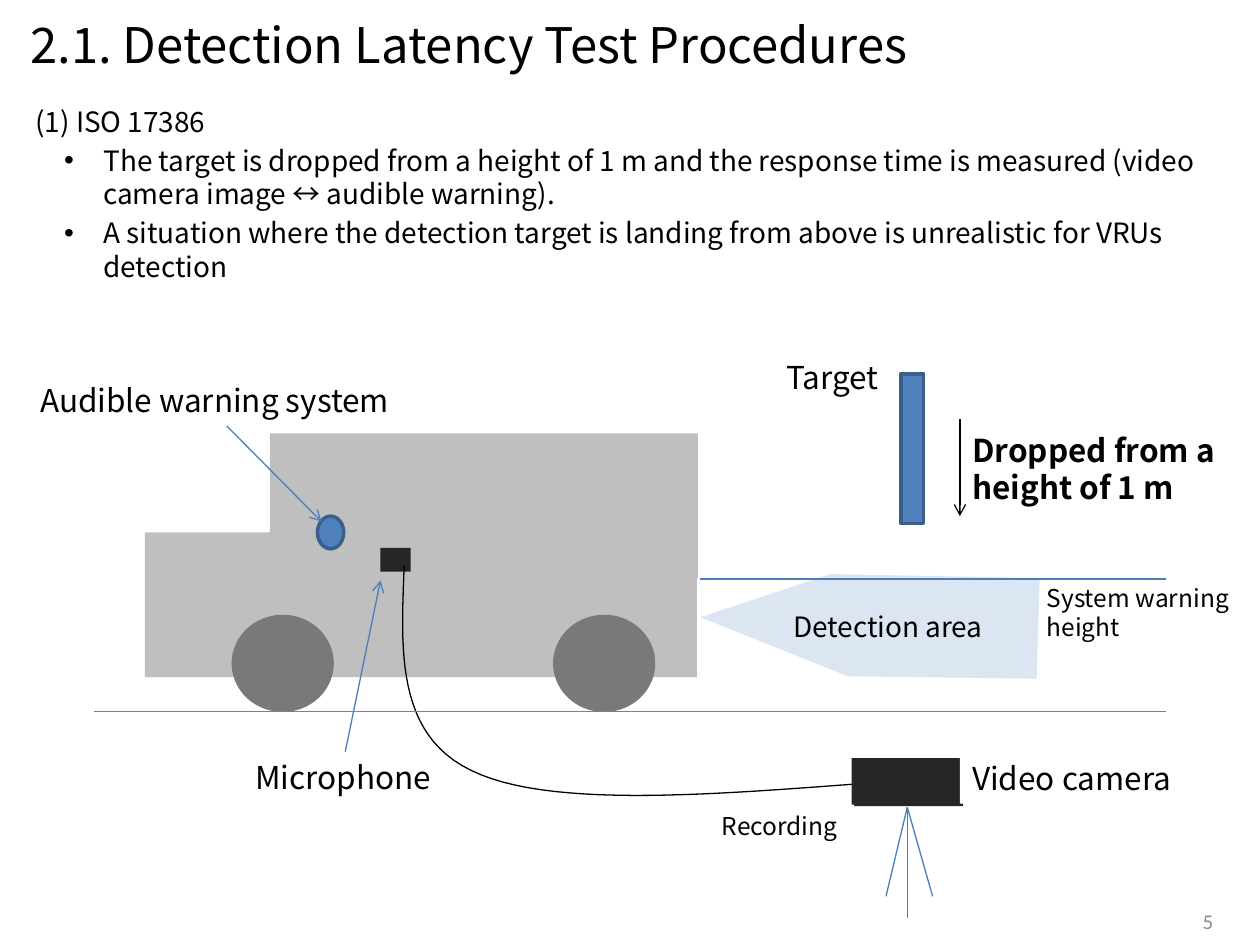
from lxml import etree
from pptx import Presentation
from pptx.dml.color import RGBColor
from pptx.enum.shapes import MSO_CONNECTOR, MSO_SHAPE
from pptx.enum.text import MSO_ANCHOR, PP_ALIGN
from pptx.oxml.ns import qn
from pptx.util import Cm, Pt

FONT = "Noto Sans CJK JP"
BLACK = RGBColor(0x00, 0x00, 0x00)
WHITE = RGBColor(0xFF, 0xFF, 0xFF)
NUMBER_GRAY = RGBColor(0x8C, 0x8C, 0x8C)
CAR_GRAY = RGBColor(0xBF, 0xBF, 0xBF)
WHEEL_GRAY = RGBColor(0x79, 0x79, 0x79)
GROUND_GRAY = RGBColor(0x80, 0x80, 0x80)
DEVICE = RGBColor(0x26, 0x26, 0x26)
BLUE = RGBColor(0x4F, 0x81, 0xBD)
EDGE_BLUE = RGBColor(0x3A, 0x5F, 0x8C)
LINE_BLUE = RGBColor(0x4B, 0x7E, 0xBC)
AREA_BLUE = RGBColor(0xDC, 0xE6, 0xF2)


def add_run(p, text, size, color=BLACK, bold=False, font=FONT):
    r = p.add_run()
    r.text = text
    r.font.name, r.font.size, r.font.bold = font, Pt(size), bold
    r.font.color.rgb = color


def style(s, fill, edge=None):
    """Give a shape a flat fill and an optional 2 pt outline."""
    s.shadow.inherit = False
    s.fill.solid()
    s.fill.fore_color.rgb = fill
    if edge:
        s.line.color.rgb = edge
        s.line.width = Pt(2)
    else:
        s.line.fill.background()


prs = Presentation()
prs.slide_width, prs.slide_height = Cm(25.4), Cm(19.08)
slide = prs.slides.add_slide(prs.slide_layouts[1])
shapes = slide.shapes

# Title and list
title, body = slide.placeholders
title.left, title.top, title.width, title.height = Cm(0.36), Cm(0.69), Cm(25.04), Cm(0.38)
tf = title.text_frame
tf.vertical_anchor = MSO_ANCHOR.MIDDLE
p = tf.paragraphs[0]
p.alignment = PP_ALIGN.LEFT
add_run(p, "2.1. Detection Latency Test Procedures", 28)

body.left, body.top, body.width, body.height = Cm(-0.43), Cm(1.98), Cm(25.25), Cm(12.07)
items = [
    ("(1) ISO 17386", None, 0.89, 0),
    ("The target is dropped from a height of 1 m and the response time is measured "
     "(video camera image ↔ audible warning).", "•", 2.26, -0.79),
    ("A situation where the detection target is landing from above is unrealistic "
     "for VRUs detection", "•", 2.26, -0.79),
]
tf = body.text_frame
for i, (text, bullet, margin, indent) in enumerate(items):
    p = tf.add_paragraph() if i else tf.paragraphs[0]
    pPr = p._p.get_or_add_pPr()
    pPr.set("marL", str(Cm(margin)))
    pPr.set("indent", str(Cm(indent)))
    if bullet:
        etree.SubElement(pPr, qn("a:buChar")).set("char", bullet)
    else:
        etree.SubElement(pPr, qn("a:buNone"))
    p.space_before = Pt(3 if i else 0)
    add_run(p, text, 16)

# Slide number
sp = shapes.add_textbox(Cm(18.9), Cm(18.06), Cm(5.92), Cm(1.02))
tf = sp.text_frame
tf.word_wrap = True
tf.vertical_anchor = MSO_ANCHOR.MIDDLE
tf.margin_right = Cm(0.36)
p = tf.paragraphs[0]
p.alignment = PP_ALIGN.RIGHT
add_run(p, "5", 12, NUMBER_GRAY, font="Calibri")

# Car, wheels, speaker, microphone, target and camera
RECT, OVAL = MSO_SHAPE.RECTANGLE, MSO_SHAPE.OVAL
for kind, x, y, w, h, fill, edge in [
    (RECT, 2.92, 10.74, 11.13, 2.92, CAR_GRAY, None),
    (RECT, 5.44, 8.74, 8.63, 2.92, CAR_GRAY, None),
    (OVAL, 4.67, 12.4, 2.06, 1.96, WHEEL_GRAY, None),
    (OVAL, 11.15, 12.4, 2.06, 1.96, WHEEL_GRAY, None),
    (OVAL, 6.4, 10.41, 0.53, 0.66, BLUE, EDGE_BLUE),
    (RECT, 18.16, 7.54, 0.46, 3.02, BLUE, EDGE_BLUE),
    (RECT, 17.17, 15.29, 2.24, 0.97, DEVICE, None),
    (RECT, 7.67, 11.05, 0.61, 0.48, DEVICE, None),
]:
    style(shapes.add_shape(kind, Cm(x), Cm(y), Cm(w), Cm(h)), fill, edge)

# Labels
for text, x, y, w, h, size, bold, wrap in [
    ("Video camera", 19.35, 15.19, 4.78, 1.02, 18, False, False),
    ("Target", 15.6, 7.09, 2.49, 1.02, 18, False, False),
    ("System warning height", 20.85, 11.63, 4.55, 1.45, 14, False, True),
    ("Audible warning system", 0.56, 7.57, 8, 1.02, 18, False, False),
    ("Dropped from a height of 1 m", 19.35, 8.56, 6.05, 1.8, 18, True, True),
    ("Microphone", 4.9, 15.16, 4.11, 1.02, 18, False, False),
    ("Recording", 14.3, 16.23, 2.92, 0.86, 14, False, False),
]:
    sp = shapes.add_textbox(Cm(x), Cm(y), Cm(w), Cm(h))
    if not bold:
        style(sp, WHITE)
    tf = sp.text_frame
    tf.word_wrap = wrap
    add_run(tf.paragraphs[0], text, size, bold=bold)

# Detection area
corners = [(14.12, 12.45), (17.09, 13.64), (20.9, 13.69), (20.96, 11.66), (16.74, 11.58)]
points = [(Cm(x), Cm(y)) for x, y in corners]
builder = shapes.build_freeform(*points[0])
builder.add_line_segments(points[1:], close=True)
area = builder.convert_to_shape()
style(area, AREA_BLUE)
tf = area.text_frame
tf.vertical_anchor = MSO_ANCHOR.MIDDLE
tf.margin_left = Cm(0.97)
p = tf.paragraphs[0]
p.alignment = PP_ALIGN.CENTER
add_run(p, "Detection area", 16)

# Recording cable, two Bezier spans
spans = [
    [(8.15, 11.4), (8.08, 13.11), (7.98, 14.81), (9.5, 15.54)],
    [(9.5, 15.54), (11, 16.28), (14.1, 16.05), (17.17, 15.82)],
]
STEPS = 24
points = []
for a, b, c, d in spans:
    for t in (i / STEPS for i in range(1, STEPS + 1)):
        u = 1 - t
        points.append(tuple(
            Cm(u**3 * a[k] + 3 * u * u * t * b[k] + 3 * u * t * t * c[k] + t**3 * d[k])
            for k in (0, 1)))
builder = shapes.build_freeform(Cm(8.15), Cm(11.4))
builder.add_line_segments(points, close=False)
cable = builder.convert_to_shape()
cable.shadow.inherit = False
cable.fill.background()
cable.line.color.rgb = BLACK
cable.line.width = Pt(0.75)

# Pointers, tripod, warning height and ground
for x1, y1, x2, y2, color, arrow in [
    (4.57, 8.59, 6.48, 10.52, LINE_BLUE, True),
    (19.35, 8.46, 19.35, 10.41, BLACK, True),
    (6.96, 15.16, 7.67, 11.71, LINE_BLUE, True),
    (14.12, 11.68, 23.5, 11.68, LINE_BLUE, False),
    (18.29, 16.28, 17.86, 18.08, LINE_BLUE, False),
    (18.29, 16.28, 18.29, 18.52, LINE_BLUE, False),
    (18.29, 16.28, 18.8, 18.08, LINE_BLUE, False),
    (1.9, 14.35, 23.5, 14.35, GROUND_GRAY, False),
]:
    s = shapes.add_connector(MSO_CONNECTOR.STRAIGHT, Cm(x1), Cm(y1), Cm(x2), Cm(y2))
    s.line.color.rgb = color
    s.line.width = Pt(0.75)
    if arrow:
        etree.SubElement(s.line._get_or_add_ln(), qn("a:tailEnd")).set("type", "arrow")
    etree.SubElement(s._element.spPr, qn("a:effectLst"))

prs.save("out.pptx")
